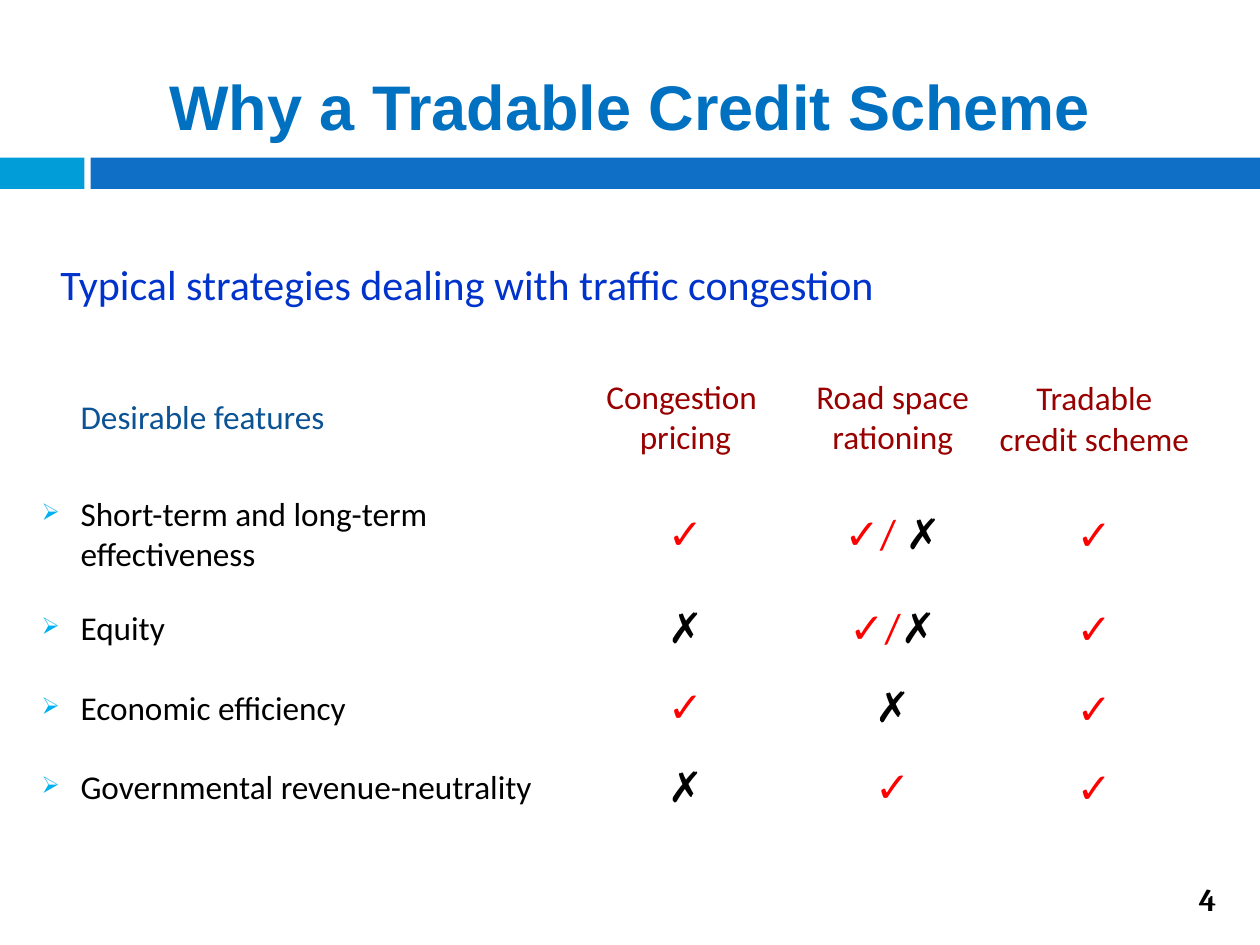
"""Builds the slide comparing strategies that deal with traffic congestion."""
from dataclasses import dataclass

from lxml import etree
from pptx import Presentation
from pptx.dml.color import RGBColor
from pptx.enum.shapes import MSO_SHAPE
from pptx.enum.text import MSO_ANCHOR, PP_ALIGN
from pptx.oxml.ns import qn
from pptx.util import Pt

LEFT, CENTER = PP_ALIGN.LEFT, PP_ALIGN.CENTER
TOP, MIDDLE = MSO_ANCHOR.TOP, MSO_ANCHOR.MIDDLE
RECTANGLE = MSO_SHAPE.RECTANGLE
EMU_PER_PX = 9144
BLACK, RED, MAROON = "000000", "FF0000", "990000"
FEATURE_BLUE, BULLET_BLUE = "0B5394", "00B0F0"
ROW_HEIGHTS = [98, 87, 63, 63, 63]
INDENT = 31


@dataclass(frozen=True)
class Box:
    left: int
    top: int
    width: int
    height: int

    def emu(self) -> list[int]:
        return [px(side) for side in (self.left, self.top, self.width, self.height)]


@dataclass(frozen=True)
class Style:
    size: int
    color: str
    font: str = "Calibri"
    bold: bool = False
    align: PP_ALIGN = LEFT


@dataclass(frozen=True)
class Label:
    text: str
    box: Box
    style: Style
    anchor: MSO_ANCHOR = MIDDLE


@dataclass(frozen=True)
class Band:
    box: Box
    color: str


@dataclass(frozen=True)
class Grid:
    left: int
    top: int
    widths: list[int]
    rows: list[list[str]]


BANDS = [
    Band(Box(0, 125, 1000, 35), "FFFFFF"),
    Band(Box(0, 125, 67, 25), "009DD9"),
    Band(Box(72, 125, 928, 25), "0F6FC6"),
]
LABELS = [
    Label("Typical strategies dealing with traffic congestion",
          Box(38, 200, 925, 50), Style(24, "0033CC"), TOP),
    Label("Why a Tradable Credit Scheme", Box(0, 50, 1000, 67),
          Style(36, "0070C0", "Arial", True, CENTER)),
    Label("4", Box(925, 700, 67, 27), Style(18, BLACK, "Cambria", True, CENTER)),
]
FEATURES = Grid(23, 283, [446, 150, 179], [
    ["Desirable features", "Congestion \npricing", "Road space rationing"],
    ["Short-term and long-term effectiveness", "✓", "✓/ ✗"],
    ["Equity", "✗", "✓/✗"],
    ["Economic efficiency", "✓", "✗"],
    ["Governmental revenue-neutrality", "✗", "✓"],
])
CREDIT = Grid(779, 284, [179], [["Tradable credit scheme"]] + [["✓"]] * 4)


def px(length: int) -> int:
    return length * EMU_PER_PX


def rgb(color: str) -> RGBColor:
    return RGBColor.from_string(color)


def format_para(para, style: Style) -> None:
    para.alignment = style.align
    for span in para.runs:
        span.font.name = style.font
        span.font.size = Pt(style.size)
        span.font.bold = style.bold
        span.font.color.rgb = rgb(style.color)


def indent_para(para, bulleted: bool) -> None:
    properties = para._p.get_or_add_pPr()
    properties.set("marL", str(px(INDENT)))
    if bulleted:
        properties.set("indent", str(-px(INDENT)))
        color = etree.SubElement(properties, qn("a:buClr"))
        etree.SubElement(color, qn("a:srgbClr"), val=BULLET_BLUE)
        etree.SubElement(properties, qn("a:buSzPct"), val="70000")
        etree.SubElement(properties, qn("a:buChar"), char="➢")


def draw_band(page, band: Band) -> None:
    shape = page.shapes.add_shape(RECTANGLE, *band.box.emu())
    shape.shadow.inherit = False
    shape.fill.solid()
    shape.fill.fore_color.rgb = rgb(band.color)
    shape.line.fill.background()


def draw_label(page, label: Label) -> None:
    frame = page.shapes.add_textbox(*label.box.emu()).text_frame
    frame.word_wrap = True
    frame.vertical_anchor = label.anchor
    frame.text = label.text
    format_para(frame.paragraphs[0], label.style)


def fill_marks(para, text: str) -> None:
    checks, cross, _ = text.partition("✗")
    for part, color in ((checks, RED), (cross, BLACK)):
        if part:
            span = para.add_run()
            span.text = part
            span.font.name = "Calibri"
            span.font.size = Pt(24)
            span.font.color.rgb = rgb(color)
    para.alignment = CENTER


def fill_cell(cell, text: str, header: bool, feature: bool) -> None:
    cell.fill.background()
    cell.vertical_anchor = MIDDLE
    frame = cell.text_frame
    if not header and not feature:
        fill_marks(frame.paragraphs[0], text)
        return
    frame.text = text
    if feature:
        style = Style(19, FEATURE_BLUE if header else BLACK)
        indent_para(frame.paragraphs[0], not header)
    else:
        style = Style(19, MAROON, align=CENTER)
    for para in frame.paragraphs:
        format_para(para, style)


def draw_grid(page, grid: Grid) -> None:
    box = Box(grid.left, grid.top, sum(grid.widths), sum(ROW_HEIGHTS))
    table = page.shapes.add_table(len(grid.rows), len(grid.widths), *box.emu()).table
    table.first_row = False
    table.horz_banding = False
    for column, width in zip(table.columns, grid.widths):
        column.width = px(width)
    for row, height in zip(table.rows, ROW_HEIGHTS):
        row.height = px(height)
    for r, texts in enumerate(grid.rows):
        for c, text in enumerate(texts):
            feature = c == 0 and len(texts) > 1
            fill_cell(table.cell(r, c), text, r == 0, feature)


def main() -> None:
    deck = Presentation()
    deck.slide_width, deck.slide_height = px(1000), px(750)
    page = deck.slides.add_slide(deck.slide_layouts[6])
    for band in BANDS:
        draw_band(page, band)
    for label in LABELS:
        draw_label(page, label)
    for grid in (FEATURES, CREDIT):
        draw_grid(page, grid)
    deck.save("out.pptx")


if __name__ == "__main__":
    main()
